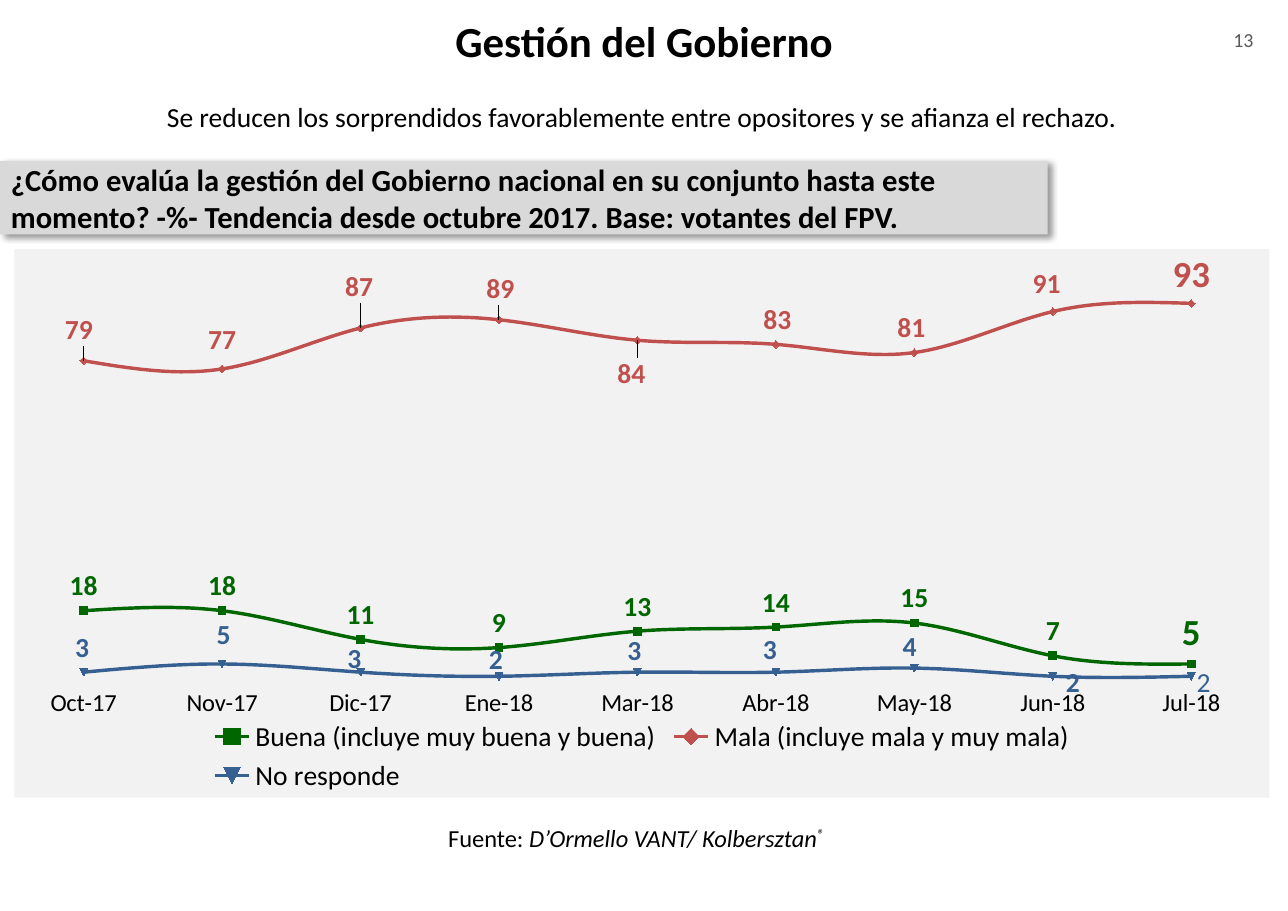
from dataclasses import dataclass

from lxml.etree import SubElement
from pptx import Presentation
from pptx.chart.data import CategoryChartData
from pptx.dml.color import RGBColor
from pptx.enum.chart import XL_CHART_TYPE as ChartType
from pptx.enum.chart import XL_LABEL_POSITION as LabelPos
from pptx.enum.chart import XL_LEGEND_POSITION as LegendPos
from pptx.enum.chart import XL_MARKER_STYLE as Marker
from pptx.enum.chart import XL_TICK_MARK as Tick
from pptx.enum.shapes import MSO_SHAPE as Shape
from pptx.enum.text import MSO_ANCHOR as Anchor
from pptx.enum.text import PP_ALIGN as Align
from pptx.oxml import parse_xml
from pptx.oxml.ns import nsdecls, qn
from pptx.util import Pt

TITLE = "Gestión del Gobierno"
PAGE = "13"
SUBTITLE = ("Se reducen los sorprendidos favorablemente entre opositores "
            "y se afianza el rechazo.")
QUESTION = ("¿Cómo evalúa la gestión del Gobierno nacional en su conjunto hasta "
            "este momento? -%- Tendencia desde octubre 2017. "
            "Base: votantes del FPV.")
SOURCE = [("Fuente: ", {}), ("D’Ormello VANT/ Kolbersztan", {"italic": True}),
          ("®", {"italic": True, "raised": True})]
MONTHS = ["Oct-17", "Nov-17", "Dic-17", "Ene-18", "Mar-18", "Abr-18",
          "May-18", "Jun-18", "Jul-18"]


@dataclass(frozen=True)
class Theme:
    font: str = "Calibri"
    text: str = "000000"
    muted: str = "595959"
    banner: str = "D9D9D9"
    panel: str = "F2F2F2"
    good: str = "006600"
    bad: str = "C0504D"
    none: str = "376092"
    title: int = 28
    highlight: int = 24
    question: int = 20
    body: int = 18
    small: int = 16
    page: int = 13


T = Theme()
# Label offsets are points from the marker; None puts every label above it.
SERIES = [
    {"name": "Buena (incluye muy buena y buena)", "color": T.good,
     "values": [18, 18, 11, 9, 13, 14, 15, 7, 5],
     "offsets": None, "last": (T.highlight, True)},
    {"name": "Mala (incluye mala y muy mala)", "color": T.bad,
     "values": [79, 77, 87, 89, 84, 83, 81, 91, 93],
     "offsets": [(-3, -20), (0, -19), (-1, -27), (1, -20), (-4, 22),
                 (1, -16), (-2, -16), (-4, -18), (0, -18)],
     "last": (T.highlight, True)},
    {"name": "No responde", "color": T.none,
     "values": [3, 5, 3, 2, 3, 3, 4, 2, 2],
     "offsets": [(-1, -16), (1, -19), (-4, -9), (-2, -11), (-2, -14),
                 (-4, -15), (-3, -14), (13, 4), (8, 4)],
     "last": (T.body, False)},
]
SLIDE_W, SLIDE_H = 841.68, 595.44
CHART_BOX = (9.4, 162.7, 820.1, 358.6)
PLOT = {"x": 0, "y": 0.047, "w": 0.993, "h": 0.747}


def rgb(color):
    return RGBColor.from_string(color)


def format_font(font, size=T.body, color=T.text, bold=False, italic=False):
    font.name, font.size = T.font, Pt(size)
    font.bold, font.italic = bold, italic
    font.color.rgb = rgb(color)


def write(sp, text, box=None, align=Align.LEFT, anchor=Anchor.TOP, **style):
    """Fill a shape with a string or a list of (text, style) runs."""
    if box:
        sp.left, sp.top, sp.width, sp.height = map(Pt, box)
    tf = sp.text_frame
    tf.word_wrap, tf.vertical_anchor = True, anchor
    p = tf.paragraphs[0]
    p.alignment = align
    for words, extra in [(text, {})] if isinstance(text, str) else text:
        r = p.add_run()
        r.text = words
        options = {**style, **extra}
        raised = options.pop("raised", False)
        format_font(r.font, **options)
        if raised:
            r.font._element.set("baseline", "30000")


def add_banner(slide):
    sp = slide.shapes.add_shape(Shape.RECTANGLE,
                                *map(Pt, (0, 105.1, 684.7, 48.2)))
    sp.fill.solid()
    sp.fill.fore_color.rgb = rgb(T.banner)
    sp.line.fill.background()
    sp.shadow.inherit = False
    effects = sp.element.spPr.find(qn("a:effectLst"))
    shadow = SubElement(effects, qn("a:outerShdw"), blurRad=str(Pt(4)),
                        dist=str(Pt(3)), dir="2700000", algn="tl",
                        rotWithShape="0")
    color = SubElement(shadow, qn("a:srgbClr"), val=T.text)
    SubElement(color, qn("a:alpha"), val="40000")
    write(sp, QUESTION, anchor=Anchor.MIDDLE, size=T.question, bold=True)


def manual_layout(target=None, **values):
    layout = parse_xml(f"<c:layout {nsdecls('c')}/>")
    manual = SubElement(layout, qn("c:manualLayout"))
    if target:
        SubElement(manual, qn("c:layoutTarget"), val=target)
        for mode in ("xMode", "yMode"):
            SubElement(manual, qn(f"c:{mode}"), val="edge")
    for key, value in values.items():
        SubElement(manual, qn(f"c:{key}"), val=f"{value:.4f}")
    return layout


def style_series(series, ser, spec):
    color = rgb(spec["color"])
    series.smooth = True
    series.format.line.color.rgb = color
    series.format.line.width = Pt(2.25)
    marker = series.marker
    marker.style, marker.size = Marker.AUTOMATIC, 5
    marker.format.fill.solid()
    marker.format.fill.fore_color.rgb = color
    marker.format.line.color.rgb = color
    offsets = spec["offsets"]
    position = LabelPos.CENTER if offsets else LabelPos.ABOVE
    labels = series.data_labels
    labels.show_value, labels.position = True, position
    format_font(labels.font, color=spec["color"], bold=True)
    last = len(MONTHS) - 1
    for i in range(len(MONTHS)):
        size, bold = spec["last"] if i == last else (T.body, True)
        label = series.points[i].data_label
        format_font(label.font, size, spec["color"], bold)
        label.position = position
    if offsets:
        for node, (dx, dy) in zip(ser.iter(qn("c:dLbl")), offsets):
            node.find(qn("c:idx")).addnext(
                manual_layout(x=dx / CHART_BOX[2], y=dy / CHART_BOX[3]))


def add_trend_chart(slide):
    data = CategoryChartData(number_format="0")
    data.categories = MONTHS
    for spec in SERIES:
        data.add_series(spec["name"], spec["values"])
    chart = slide.shapes.add_chart(ChartType.LINE_MARKERS,
                                   *map(Pt, CHART_BOX), data).chart
    chart.has_title = False
    format_font(chart.font)
    chart.has_legend = True
    chart.legend.position = LegendPos.BOTTOM
    chart.legend.include_in_layout = False
    format_font(chart.legend.font)

    months, percent = chart.category_axis, chart.value_axis
    months.major_tick_mark = months.minor_tick_mark = Tick.NONE
    months.has_major_gridlines = False
    months.format.line.fill.background()
    format_font(months.tick_labels.font, T.small)
    percent.minimum_scale, percent.maximum_scale = 0, 100
    percent.has_major_gridlines = False
    percent.visible = False

    plot = chart.plots[0]
    plot.vary_by_categories = False
    root = chart.element
    for series, ser, spec in zip(plot.series, root.iter(qn("c:ser")), SERIES):
        style_series(series, ser, spec)

    area = root.find(".//" + qn("c:plotArea"))
    for old in area.findall(qn("c:layout")):
        area.remove(old)
    area.insert(0, manual_layout("inner", **PLOT))
    root.find(qn("c:chart")).addnext(parse_xml(
        f"<c:spPr {nsdecls('c', 'a')}><a:solidFill>"
        f'<a:srgbClr val="{T.panel}"/></a:solidFill>'
        "<a:ln><a:noFill/></a:ln></c:spPr>"))


def main():
    prs = Presentation()
    prs.slide_width, prs.slide_height = Pt(SLIDE_W), Pt(SLIDE_H)
    slide = prs.slides.add_slide(prs.slide_layouts[5])
    add_trend_chart(slide)
    add_banner(slide)
    write(slide.shapes.title, TITLE, (0, -7.2, SLIDE_W, 67.7), Align.CENTER,
          Anchor.MIDDLE, size=T.title, bold=True)
    boxes = [
        (PAGE, (780.5, 14.4, 64.1, 31.7), Align.CENTER,
         {"size": T.page, "color": T.muted}),
        (SUBTITLE, (-1.4, 61.9, SLIDE_W, 28.8), Align.CENTER, {}),
        (SOURCE, (285.8, 534.2, 268.6, 26.6), Align.LEFT, {"size": T.small}),
    ]
    for text, box, align, style in boxes:
        sp = slide.shapes.add_textbox(*map(Pt, box))
        write(sp, text, align=align, **style)
    prs.save("out.pptx")


if __name__ == "__main__":
    main()
